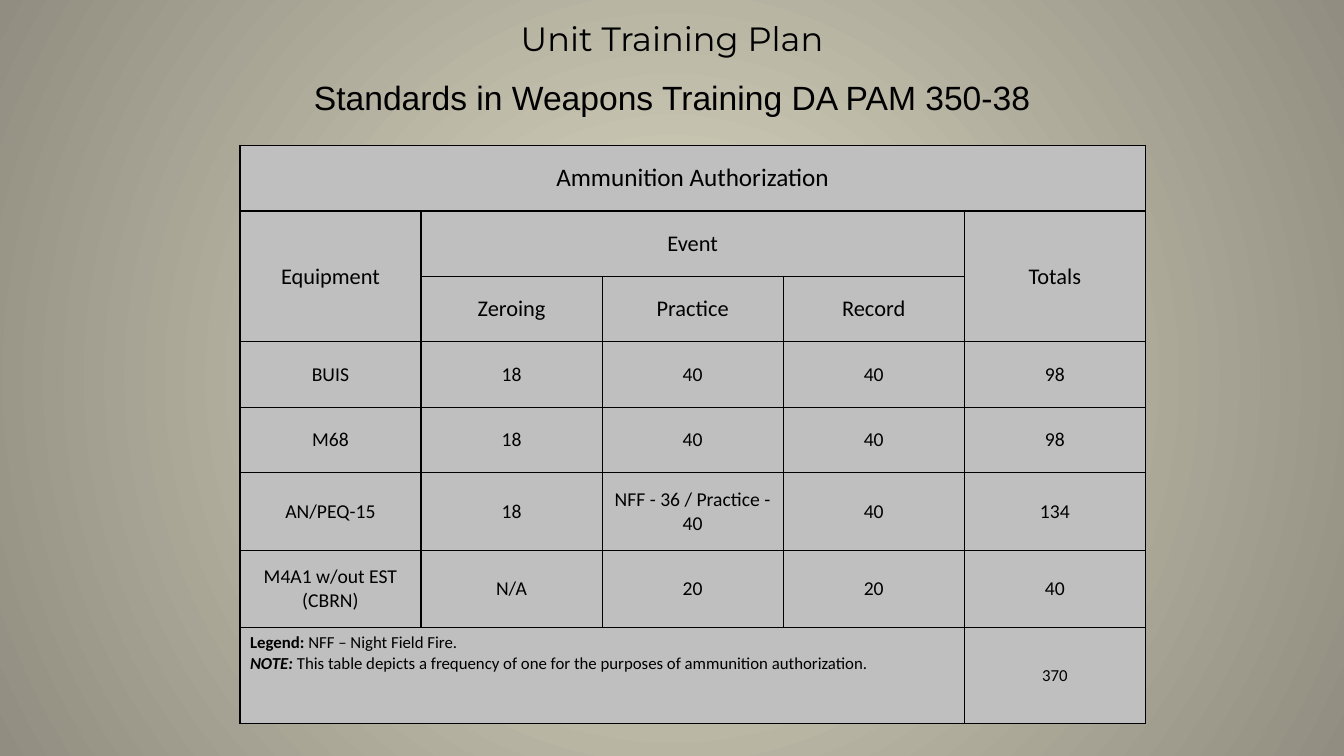
from lxml.etree import SubElement as Sub
from pptx import Presentation
from pptx.dml.color import RGBColor as RGB
from pptx.enum.text import MSO_ANCHOR as Anchor, PP_ALIGN as Align
from pptx.oxml.ns import qn
from pptx.util import Inches, Pt

WIDE, HIGH = Inches(13.33), Inches(7.5)
GRID = [
    ["Ammunition Authorization", "", "", "", ""],
    ["Equipment", "Event", "", "", "Totals"],
    ["", "Zeroing", "Practice", "Record", ""],
    ["BUIS", "18", "40", "40", "98"],
    ["M68", "18", "40", "40", "98"],
    ["AN/PEQ-15", "18", "NFF - 36 / Practice - 40", "40", "134"],
    ["M4A1 w/out EST (CBRN)", "N/A", "20", "20", "40"],
    ["", "", "", "", "370"],
]
ROWS = [0.65] * 5 + [0.77] * 2 + [0.95]
SIZES = [18, 16, 16, 14, 14, 14, 14, 12]
SPANS = [(0, 0, 0, 4), (1, 0, 2, 0), (1, 1, 1, 3), (1, 4, 2, 4), (7, 0, 7, 3)]
NOTES = [
    ("Legend: ", "NFF – Night Field Fire.", False),
    ("NOTE: ", "This table depicts a frequency of one for the purposes of "
     "ammunition authorization.", True),
]


def tint(code):
    return RGB.from_string(code)


class Page:
    """Draws on one slide, with places given as percent of its size."""

    ink, gray = "000000", "BFBFBF"

    def __init__(self, deck):
        self.slide = deck.slides.add_slide(deck.slide_layouts[6])

    def place(self, left, top, wide, high):
        return [int(part * side / 100) for part, side in
                zip((left, top, wide, high), (WIDE, HIGH, WIDE, HIGH))]

    def font(self, para, face, size):
        para.font.name, para.font.size = face, Pt(size)
        para.font.color.rgb = tint(self.ink)

    def back(self, inner, outer):
        fill = self.slide.background.fill
        fill.gradient()
        for stop, code in zip(fill.gradient_stops, (inner, outer)):
            stop.color.rgb = tint(code)
        grad = self.slide.element.find(".//" + qn("a:gradFill"))
        grad.remove(grad.find(qn("a:lin")))
        ring = Sub(grad, qn("a:path"), path="circle")
        Sub(ring, qn("a:fillToRect"), dict.fromkeys("ltrb", "50000"))

    def title(self, text, box, face, tight=False):
        frame = self.slide.shapes.add_textbox(*self.place(*box)).text_frame
        frame.word_wrap = True
        if tight:
            frame.margin_left = frame.margin_right = frame.margin_bottom = 0
            frame.margin_top = Inches(0.01)
        para = frame.paragraphs[0]
        para.text, para.alignment = text, Align.CENTER
        self.font(para, face, 24)

    def edge(self, cell):
        props = cell._tc.get_or_add_tcPr()
        for spot, side in enumerate("LRTB"):
            line = props.makeelement(qn("a:ln" + side), w=str(Pt(1)))
            paint = Sub(line, qn("a:solidFill"))
            Sub(paint, qn("a:srgbClr"), val=self.ink)
            props.insert(spot, line)

    def table(self, box, face):
        place = self.place(*box)
        frame = self.slide.shapes.add_table(len(GRID), len(GRID[0]), *place)
        table = frame.table
        table.first_row = table.horz_banding = False
        for row, part in zip(table.rows, ROWS):
            row.height = int(place[3] * part / sum(ROWS))
        for row, texts, size in zip(table.rows, GRID, SIZES):
            for cell, text in zip(row.cells, texts):
                cell.fill.solid()
                cell.fill.fore_color.rgb = tint(self.gray)
                self.edge(cell)
                cell.vertical_anchor = Anchor.MIDDLE
                para = cell.text_frame.paragraphs[0]
                para.text, para.alignment = text, Align.CENTER
                self.font(para, face, size)
        for top, left, end, right in SPANS:
            table.cell(top, left).merge(table.cell(end, right))
        self.notes(table.cell(len(GRID) - 1, 0), face)

    def notes(self, cell, face):
        cell.vertical_anchor = Anchor.TOP
        frame = cell.text_frame
        frame.add_paragraph()
        for para, (head, body, slant) in zip(frame.paragraphs, NOTES):
            para.alignment = Align.LEFT
            self.font(para, face, SIZES[-1])
            run = para.add_run()
            run.text, run.font.bold = head, True
            if slant:
                run.font.italic = True
            para.add_run().text = body


def main():
    deck = Presentation()
    deck.slide_width, deck.slide_height = WIDE, HIGH
    page = Page(deck)
    page.back("DDD9C3", "918E81")
    page.title("Unit Training Plan", (0, 2.27, 100, 5.6), "Montserrat", True)
    page.title("Standards in Weapons Training DA PAM 350-38",
               (0, 9.47, 100, 7.07), "Arial")
    page.table((17.85, 19.25, 67.37, 76.45), "Calibri")
    deck.save("out.pptx")


if __name__ == "__main__":
    main()
